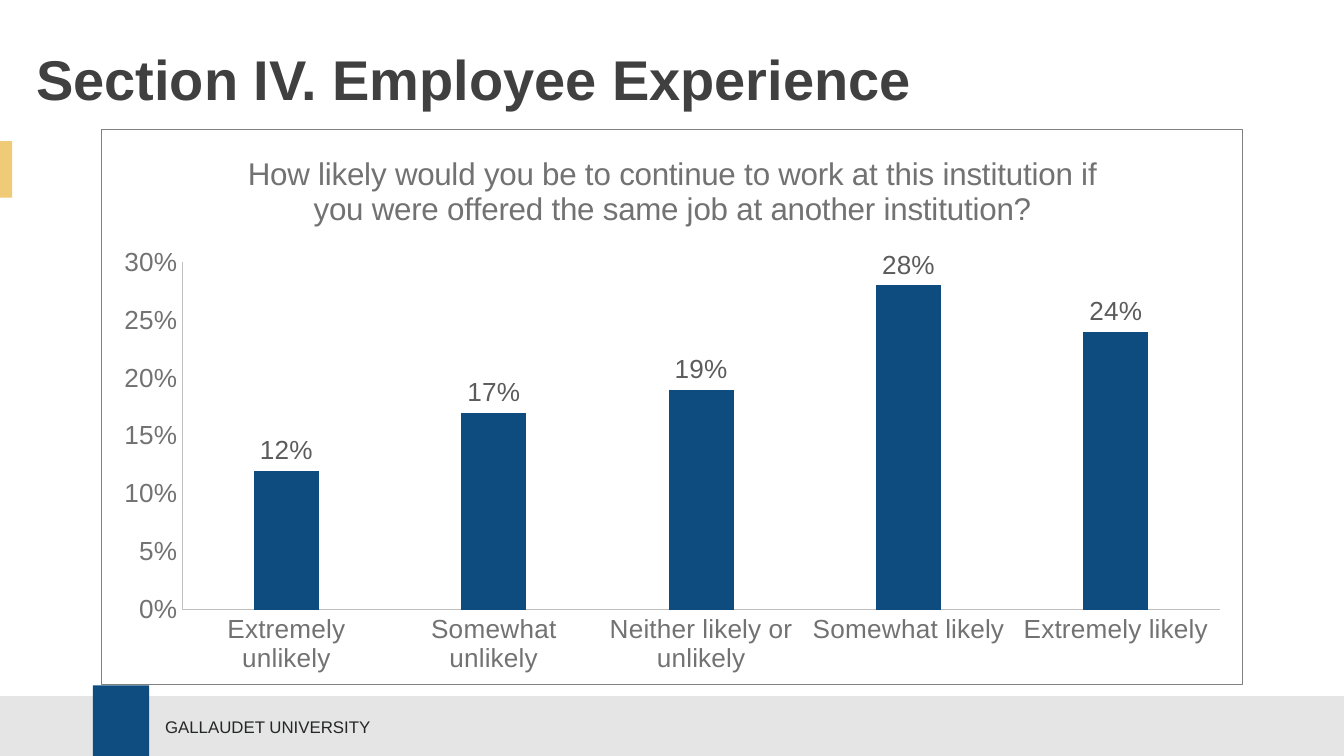
import pptx
import pptx.chart.data
import pptx.dml.color
import pptx.enum.chart
import pptx.enum.shapes
import pptx.enum.text
import pptx.oxml
import pptx.oxml.ns
import pptx.util
from pptx.util import Inches

COLORS = {
    "gold": "EFCA77",
    "band": "E5E5E5",
    "blue": "0F4D81",
    "bar": "0E4C80",
    "heading": "404041",
    "footer": "252626",
    "chart_text": "262626",
    "axis_text": "727272",
    "label": "5C5C5C",
    "axis_line": "BFBFBF",
    "border": "808080",
}
QUESTION = (
    "How likely would you be to continue to work at this institution "
    "if you were offered the same job at another institution?"
)
RESPONSES = {
    "Extremely unlikely": 0.12,
    "Somewhat unlikely": 0.17,
    "Neither likely or unlikely": 0.19,
    "Somewhat likely": 0.28,
    "Extremely likely": 0.24,
}


def rgb(color):
    return pptx.dml.color.RGBColor.from_string(COLORS[color])


def style_font(font, size, color, bold=False):
    font.name = "Arial"
    font.size = pptx.util.Pt(size)
    font.bold = bold
    font.color.rgb = rgb(color)


def add_block(slide, left, top, width, height, color):
    block = slide.shapes.add_shape(
        pptx.enum.shapes.MSO_SHAPE.RECTANGLE,
        Inches(left), Inches(top), Inches(width), Inches(height),
    )
    block.shadow.inherit = False
    block.fill.solid()
    block.fill.fore_color.rgb = rgb(color)
    block.line.fill.background()


def fill_text(shape, text, size, color, bold=False):
    frame = shape.text_frame
    frame.word_wrap = True
    frame.auto_size = pptx.enum.text.MSO_AUTO_SIZE.NONE
    frame.vertical_anchor = pptx.enum.text.MSO_ANCHOR.MIDDLE
    frame.text = text
    paragraph = frame.paragraphs[0]
    paragraph.alignment = pptx.enum.text.PP_ALIGN.LEFT
    style_font(paragraph.font, size, color, bold)


def set_title(slide, text):
    title = slide.shapes.title
    title.left, title.top = Inches(0.17), Inches(0.2)
    title.width, title.height = Inches(8.75), Inches(0.76)
    fill_text(title, text, 30, "heading", bold=True)


def add_footer(slide, text):
    add_block(slide, -0.03, 5.18, 10.09, 0.5, "band")
    add_block(slide, 0.69, 5.1, 0.42, 0.58, "blue")
    footer = slide.shapes.add_textbox(
        Inches(1.13), Inches(5.28), Inches(3.95), Inches(0.25)
    )
    fill_text(footer, text, 9, "footer")


def style_axis(axis):
    axis.has_major_gridlines = False
    axis.major_tick_mark = pptx.enum.chart.XL_TICK_MARK.NONE
    axis.minor_tick_mark = pptx.enum.chart.XL_TICK_MARK.NONE
    axis.format.line.color.rgb = rgb("axis_line")
    axis.format.line.width = pptx.util.Pt(0.75)
    style_font(axis.tick_labels.font, 14, "axis_text")


def add_chart_border(chart):
    border = pptx.oxml.parse_xml(
        f'<c:spPr {pptx.oxml.ns.nsdecls("c", "a")}><a:noFill/>'
        f'<a:ln w="{pptx.util.Pt(0.75)}"><a:solidFill>'
        f'<a:srgbClr val="{COLORS["border"]}"/></a:solidFill></a:ln></c:spPr>'
    )
    chart.element.find(pptx.oxml.ns.qn("c:chart")).addnext(border)


def add_response_chart(slide):
    data = pptx.chart.data.CategoryChartData(number_format="0%")
    data.categories = list(RESPONSES)
    data.add_series(QUESTION, list(RESPONSES.values()))
    chart = slide.shapes.add_chart(
        pptx.enum.chart.XL_CHART_TYPE.COLUMN_CLUSTERED,
        Inches(0.75), Inches(0.96), Inches(8.5), Inches(4.14), data,
    ).chart
    style_font(chart.font, 14, "chart_text")
    chart.has_legend = False
    chart.has_title = True
    chart.chart_title.include_in_layout = False
    chart.chart_title.text_frame.text = QUESTION
    style_font(chart.chart_title.text_frame.paragraphs[0].font, 16.8, "axis_text")

    style_axis(chart.category_axis)
    style_axis(chart.value_axis)
    chart.value_axis.minimum_scale = 0
    chart.value_axis.maximum_scale = 0.3
    chart.value_axis.major_unit = 0.05
    chart.value_axis.tick_labels.number_format = "0%"
    chart.value_axis.tick_labels.number_format_is_linked = False

    plot = chart.plots[0]
    plot.vary_by_categories = False
    plot.gap_width = 219
    plot.overlap = -27
    bars = plot.series[0]
    bars.format.fill.solid()
    bars.format.fill.fore_color.rgb = rgb("bar")
    labels = bars.data_labels
    labels.show_value = True
    labels.number_format = "0%"
    labels.number_format_is_linked = False
    labels.position = pptx.enum.chart.XL_LABEL_POSITION.OUTSIDE_END
    style_font(labels.font, 14, "label")
    add_chart_border(chart)


def main():
    presentation = pptx.Presentation()
    presentation.slide_width = Inches(10)
    presentation.slide_height = Inches(10) * 9 // 16
    slide = presentation.slides.add_slide(presentation.slide_layouts[5])
    add_block(slide, 0, 1.05, 0.09, 0.42, "gold")
    add_footer(slide, "GALLAUDET UNIVERSITY")
    add_response_chart(slide)
    set_title(slide, "Section IV. Employee Experience")
    presentation.save("out.pptx")


if __name__ == "__main__":
    main()
